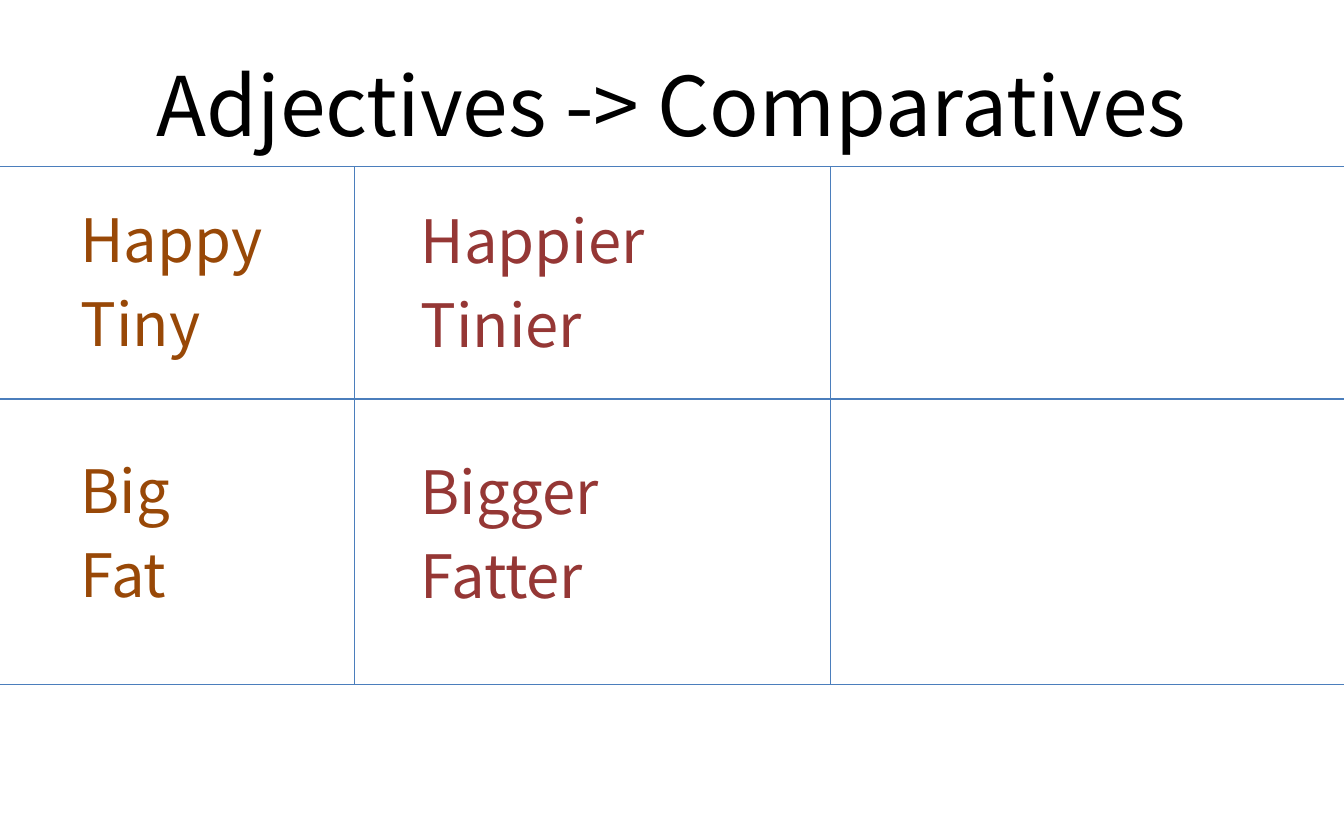
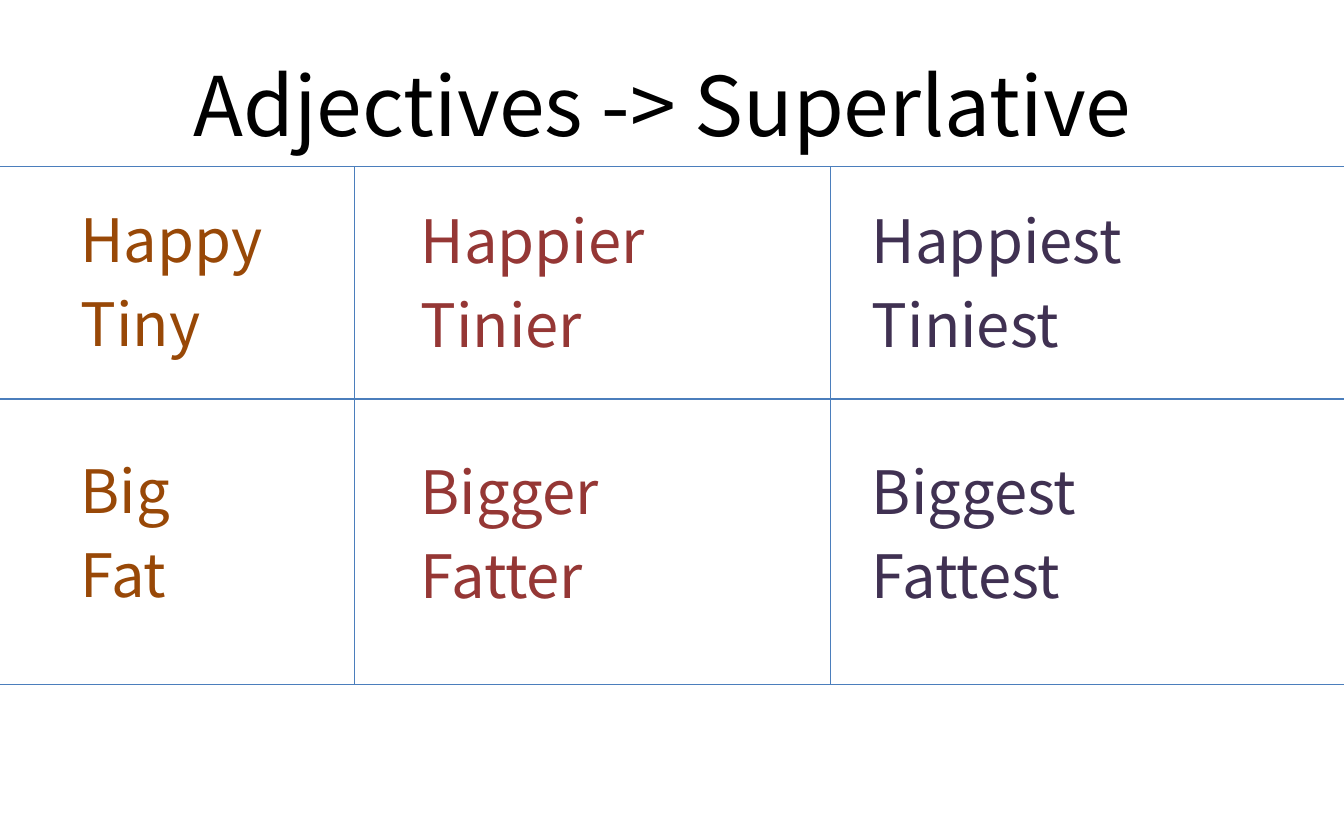
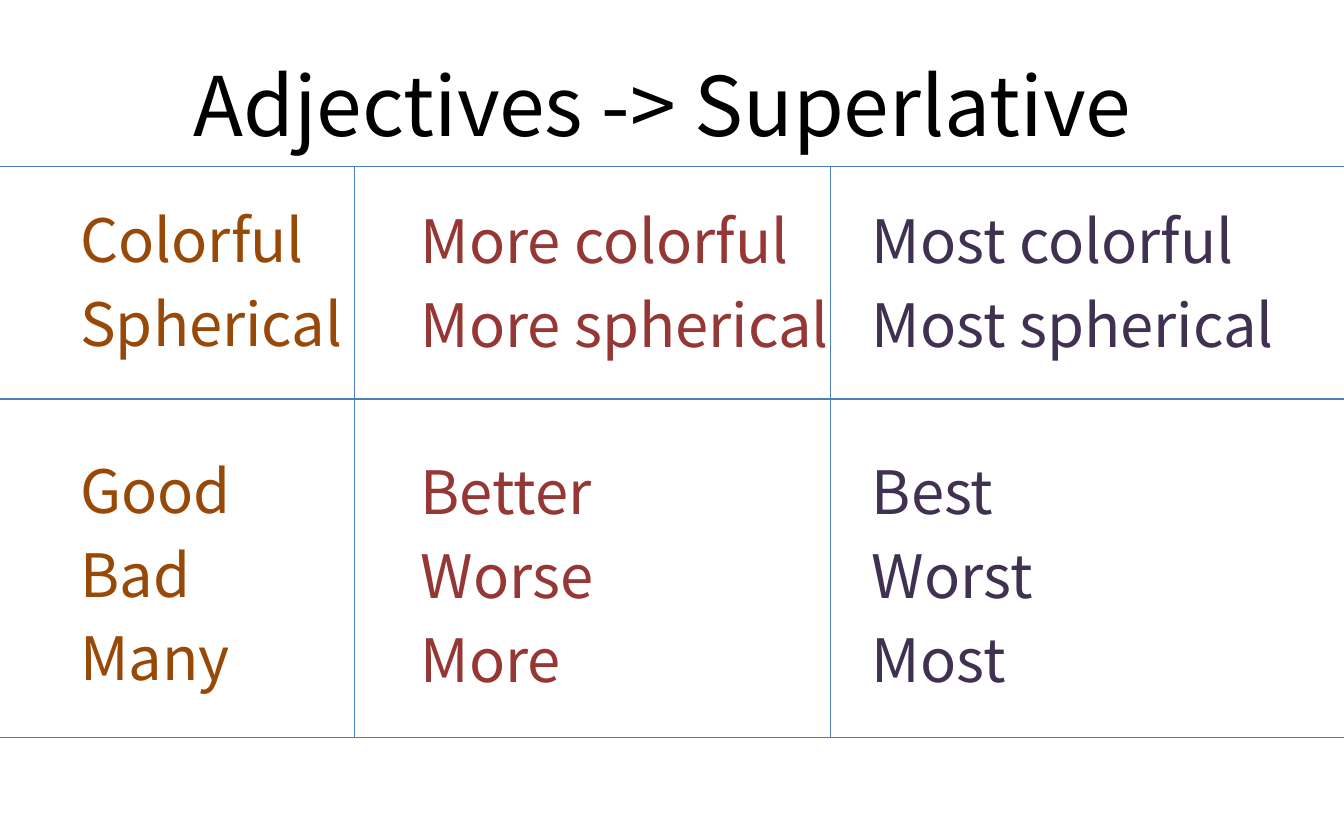
"""Build three slides on comparative and superlative adjectives."""
from lxml import etree
from pptx import Presentation
from pptx import util as u
from pptx.dml.color import RGBColor
from pptx.enum import shapes, text
from pptx.oxml.ns import qn

COLORS = {"title": "000000", "adjective": "984807", "comparative": "953735",
          "superlative": "403152", "rule": "4B7EBC"}
FONT = "Noto Sans CJK KR"
WORD_GAP = 6.4
GROUP_GAP = 51.2
COLUMNS = {"adjective": (36, 105.1, 648), "comparative": (218.2, 105.8, 478),
           "superlative": (460, 105.8, 268.6)}
TOP_RULE, MIDDLE_RULE, RIGHT_EDGE = 89.3, 213.8, 723
DIVIDERS = (190, 445)

Y_GROUPS = {"adjective": [["Happy", "Tiny"], ["Big", "Fat"]],
            "comparative": [["Happier", "Tinier"], ["Bigger", "Fatter"]]}
LESSONS = [
    ("Adjectives -> Comparatives", 366.6, Y_GROUPS),
    ("Adjectives -> Superlative ", 366.6,
     {**Y_GROUPS, "superlative": [["Happiest", "Tiniest"], ["Biggest", "Fattest"]]}),
    ("Adjectives -> Superlative ", 395.2, {
        "adjective": [["Colorful", "Spherical"], ["Good", "Bad", "Many"]],
        "comparative": [["More colorful", "More spherical"], ["Better", "Worse", "More"]],
        "superlative": [["Most colorful", "Most spherical"], ["Best", "Worst", "Most"]]}),
]


def style(paragraph, size, color, **layout):
    for name, value in layout.items():
        setattr(paragraph, name, value)
    for name, value in {"name": FONT, "size": u.Pt(size)}.items():
        setattr(paragraph.font, name, value)
    paragraph.font.color.rgb = RGBColor.from_string(COLORS[color])


deck = Presentation()
deck.slide_width, deck.slide_height = u.Pt(720), u.Pt(450)

for heading, bottom_rule, columns in LESSONS:
    slide = deck.slides.add_slide(deck.slide_layouts[5])
    title = slide.shapes.title
    for name, value in {"left": 36, "top": 18, "width": 648, "height": 75}.items():
        setattr(title, name, u.Pt(value))
    title.text_frame.text = heading
    title.text_frame.auto_size = text.MSO_AUTO_SIZE.NONE
    title.text_frame.vertical_anchor = text.MSO_ANCHOR.MIDDLE
    style(title.text_frame.paragraphs[0], 44, "title", alignment=text.PP_ALIGN.CENTER)

    for degree, groups in columns.items():
        left, top, width = COLUMNS[degree]
        column = slide.shapes.add_textbox(u.Pt(left), u.Pt(top), u.Pt(width), u.Pt(296.6)).text_frame
        column.word_wrap = True
        column.text = "\n".join(word for group in groups for word in group)
        for index, paragraph in enumerate(column.paragraphs):
            gap = GROUP_GAP if index == len(groups[0]) else WORD_GAP
            style(paragraph, 32, degree, space_before=u.Pt(gap if index else 0))

    rules = [(0, y, RIGHT_EDGE, y) for y in (TOP_RULE, MIDDLE_RULE, bottom_rule)]
    rules += [(x, TOP_RULE, x, bottom_rule) for x in DIVIDERS]
    for ends in rules:
        rule = slide.shapes.add_connector(shapes.MSO_CONNECTOR.STRAIGHT, *map(u.Pt, ends))
        rule.line.width = u.Pt(0.75)
        rule.line.color.rgb = RGBColor.from_string(COLORS["rule"])
        etree.SubElement(rule.element.spPr, qn("a:effectLst"))

deck.save("out.pptx")
